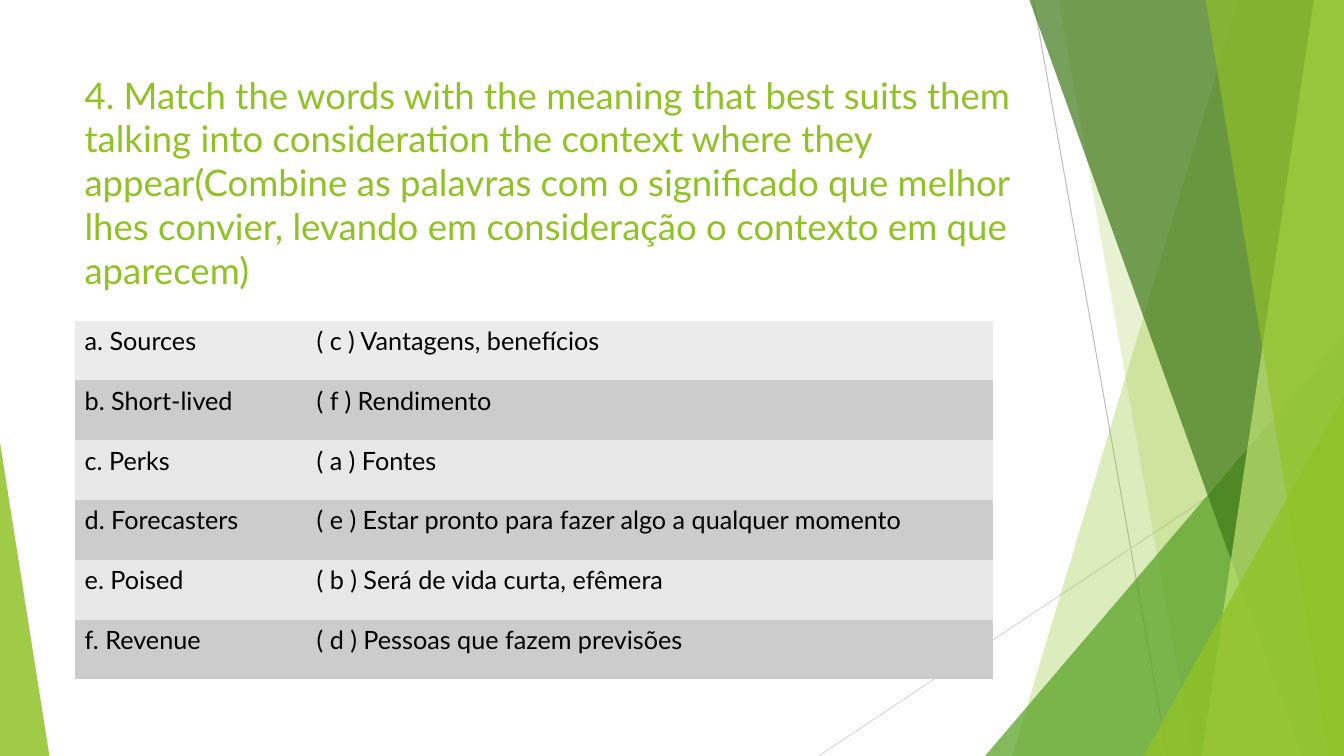
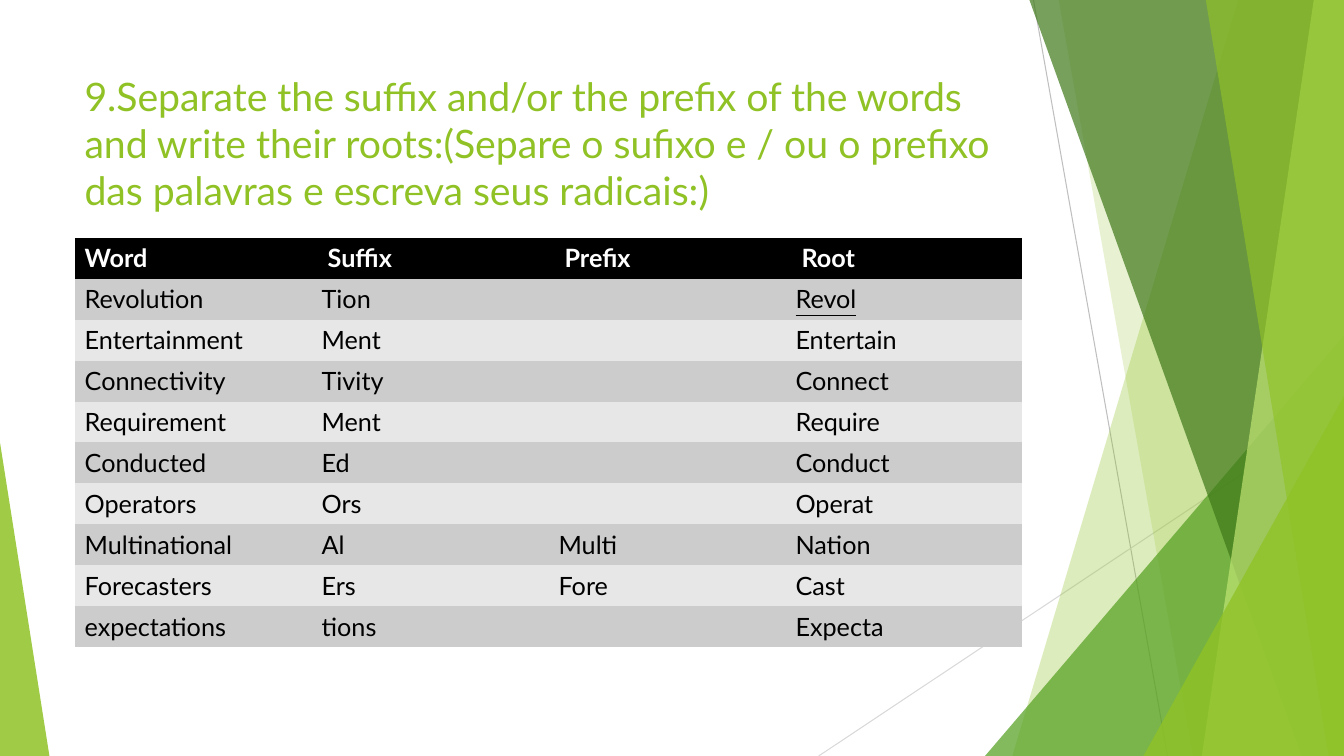
from lxml.etree import SubElement
from pptx import Presentation
from pptx.dml.color import RGBColor
from pptx.enum.shapes import MSO_CONNECTOR, MSO_SHAPE
from pptx.enum.text import MSO_ANCHOR
from pptx.oxml.ns import qn
from pptx.util import Inches, Pt

WIDTH, HEIGHT = 13.33, 7.5
LEFT = 0.74
GREEN, MID_GREEN, DARK_GREEN, LIME = "90C226", "54A021", "3F7819", "C0E474"
BLACK, WHITE = "000000", "FFFFFF"
LIGHT_ROW, DARK_ROW, TOP_ROW = "E7E7E7", "CCCCCC", "EBEBEB"
PLAIN_TABLE_STYLE = "{2D5ABB26-0587-4C30-8999-92F81FD0307C}"

THIN_LINES = [
    ((10.25, 0), (11.58, HEIGHT), "BFBFBF"),
    ((WIDTH, 4.03), (8.12, HEIGHT), "D9D9D9"),
]
BACK_BANDS = [(12.28, 10.04, GREEN, 30), (10.5, 11.83, GREEN, 20)]
FRONT_BANDS = [
    (10.21, 12.91, DARK_GREEN, 70),
    (13.03, 11.92, LIME, 70),
    (11.96, 13.18, GREEN, 65),
]
BACK_CORNER = ((9.77, 3.33, 3.56, 4.17), 1, MID_GREEN, 72)
FRONT_CORNERS = [
    ((11.34, 3.93, 1.99, 3.57), 1, GREEN, 80),
    ((0, 4.39, 0.49, 3.11), 0, GREEN, 85),
]

MATCH_TITLE = (
    "4. Match the words with the meaning that best suits them talking into "
    "consideration the context where they appear(Combine as palavras com o "
    "significado que melhor lhes convier, levando em consideração o contexto "
    "em que aparecem)"
)
MATCH_ROWS = [
    ("a. Sources", "( c ) Vantagens, benefícios"),
    ("b. Short-lived", "( f ) Rendimento"),
    ("c. Perks", "( a ) Fontes"),
    ("d. Forecasters", "( e ) Estar pronto para fazer algo a qualquer momento"),
    ("e. Poised", "( b ) Será de vida curta, efêmera"),
    ("f. Revenue", "( d ) Pessoas que fazem previsões"),
]
AFFIX_TITLE = (
    "9.Separate the suffix and/or the prefix of the words and write their "
    "roots:(Separe o sufixo e / ou o prefixo das palavras e escreva seus "
    "radicais:)"
)
AFFIX_ROWS = [
    ("Word", "Suffix", "Prefix", "Root"),
    ("Revolution", "Tion", "", "Revol"),
    ("Entertainment", "Ment", "", "Entertain"),
    ("Connectivity", "Tivity", "", "Connect"),
    ("Requirement", "Ment", "", "Require"),
    ("Conducted", "Ed", "", "Conduct"),
    ("Operators", "Ors", "", "Operat"),
    ("Multinational", "Al", "Multi", "Nation"),
    ("Forecasters", "Ers", "Fore", "Cast"),
    ("expectations", "tions", "", "Expecta"),
]


def color(value):
    return RGBColor.from_string(value)


def inches(values):
    return [Inches(value) for value in values]


def write(para, text, shade, **formats):
    span = para.add_run()
    span.text = text
    span.font.color.rgb = color(shade)
    for name, value in {"name": "Lato", **formats}.items():
        setattr(span.font, name, value)


def paint(shape, shade, opacity):
    shape.shadow.inherit = False
    shape.line.fill.background()
    shape.fill.solid()
    shape.fill.fore_color.rgb = color(shade)
    solid = shape.fill._xPr.find(qn("a:solidFill"))
    SubElement(solid[0], qn("a:alpha"), val=str(opacity * 1000))


def add_thin_line(page, start, end, shade):
    line = page.shapes.add_connector(
        MSO_CONNECTOR.STRAIGHT, *inches(start + end))
    line.line.color.rgb = color(shade)
    line.line.width = Pt(0.75)
    SubElement(line._element.spPr, qn("a:effectLst"))


def add_band(page, top_left, bottom_left, shade, opacity):
    outline = page.shapes.build_freeform(Inches(top_left), 0)
    corners = [(WIDTH, 0), (WIDTH, HEIGHT), (bottom_left, HEIGHT)]
    outline.add_line_segments([inches(corner) for corner in corners], close=True)
    paint(outline.convert_to_shape(), shade, opacity)


def add_corner(page, box, apex, shade, opacity):
    corner = page.shapes.add_shape(MSO_SHAPE.ISOSCELES_TRIANGLE, *inches(box))
    corner.adjustments[0] = apex
    paint(corner, shade, opacity)


def add_backdrop(page):
    for line in THIN_LINES:
        add_thin_line(page, *line)
    for band in BACK_BANDS:
        add_band(page, *band)
    add_corner(page, *BACK_CORNER)
    for band in FRONT_BANDS:
        add_band(page, *band)
    for corner in FRONT_CORNERS:
        add_corner(page, *corner)


def add_title(page, box, text, size):
    frame = page.shapes.add_textbox(*inches(box)).text_frame
    frame.word_wrap = True
    frame.vertical_anchor = MSO_ANCHOR.TOP
    write(frame.paragraphs[0], text, GREEN, size=Pt(size))


def add_grid(page, box, rows, shares, fills, header=False, underlined=()):
    table = page.shapes.add_table(len(rows), len(shares), *inches(box)).table
    table._tbl.tblPr.find(qn("a:tableStyleId")).text = PLAIN_TABLE_STYLE
    for column, share in zip(table.columns, shares):
        column.width = Inches(box[2] * share / sum(shares))
    for r, (texts, fill) in enumerate(zip(rows, fills)):
        heading = header and r == 0
        for c, text in enumerate(texts):
            cell = table.cell(r, c)
            cell.fill.solid()
            cell.fill.fore_color.rgb = color(fill)
            if heading and c:
                cell.margin_left = Inches(0.16)
            if text:
                write(cell.text_frame.paragraphs[0], text,
                      WHITE if heading else BLACK, size=Pt(18),
                      bold=heading, underline=text in underlined)


def add_exercise(deck, title, title_box, size, grid_box, rows, shares, **grid):
    page = deck.slides.add_slide(deck.slide_layouts[6])
    add_backdrop(page)
    add_title(page, title_box, title, size)
    add_grid(page, grid_box, rows, shares, **grid)


def main():
    deck = Presentation()
    deck.slide_width, deck.slide_height = inches((WIDTH, HEIGHT))
    add_exercise(
        deck, MATCH_TITLE, (LEFT, 0.67, 9.52, 2.33), 26.1,
        (LEFT, 3.18, 9.11, 3.56), MATCH_ROWS, (2.3, 6.81),
        fills=[TOP_ROW, DARK_ROW] + [LIGHT_ROW, DARK_ROW] * 2)
    add_exercise(
        deck, AFFIX_TITLE, (LEFT, 0.67, 9.4, 1.44), 28,
        (LEFT, 2.36, 9.4, 4.06), AFFIX_ROWS, (1, 1, 1, 1),
        fills=[BLACK] + [DARK_ROW, LIGHT_ROW] * 4 + [DARK_ROW],
        header=True, underlined=("Revol",))
    deck.save("out.pptx")


if __name__ == "__main__":
    main()
